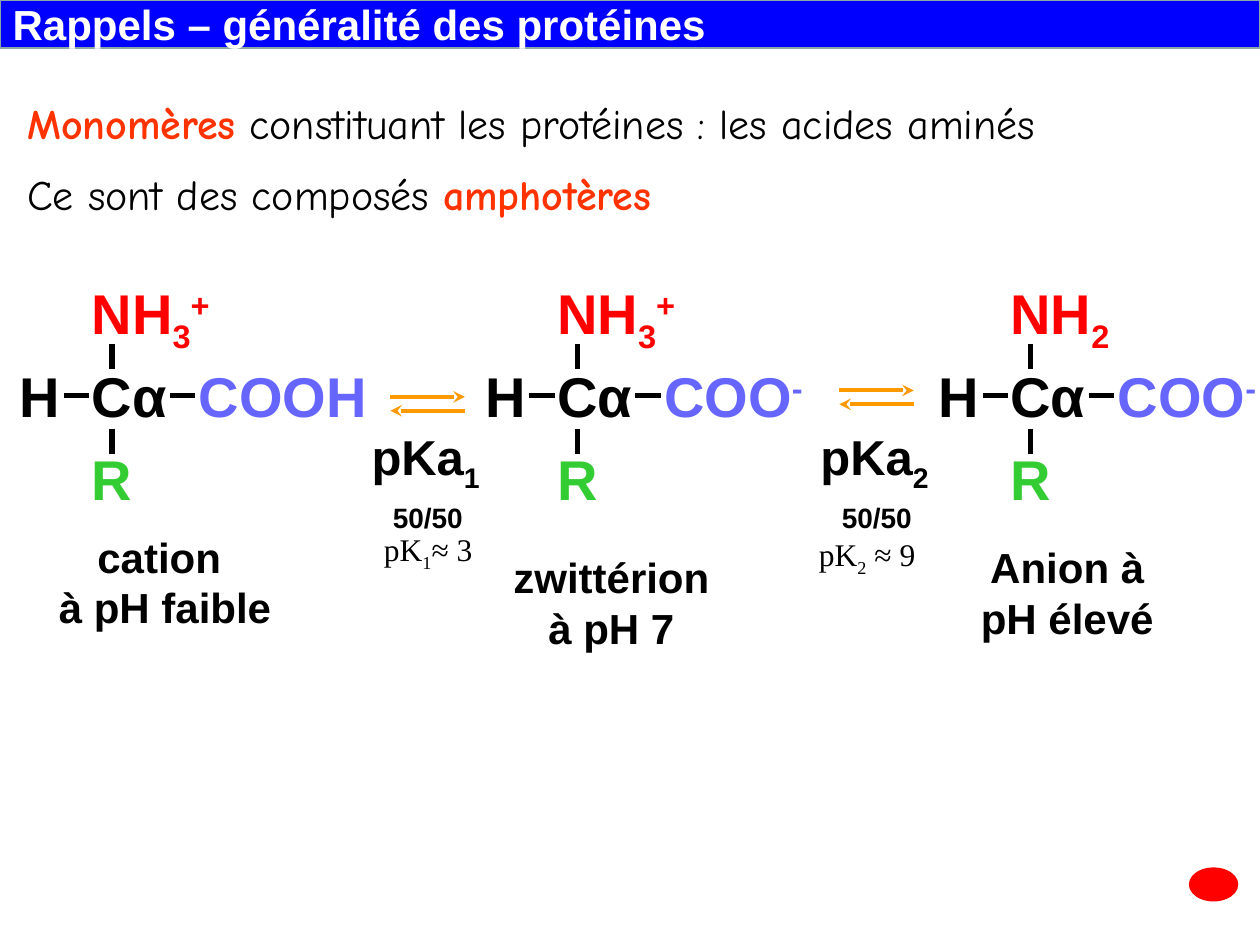
from lxml.etree import SubElement
from pptx import Presentation
from pptx.dml.color import RGBColor
from pptx.enum.shapes import MSO_CONNECTOR as Link, MSO_SHAPE as Preset
from pptx.enum.text import MSO_ANCHOR as Anchor, MSO_AUTO_SIZE as AutoSize, PP_ALIGN as Align
from pptx.oxml.ns import qn
from pptx.util import Cm, Pt

rgb = RGBColor.from_string
BLACK, RED, GREEN, VIOLET = "000000", "FF0000", "33CC33", "6666FF"
ORANGE, VERMILION = "FF9900", "FF3300"
SUB, SUP = -25, 30

prs = Presentation()
prs.slide_width, prs.slide_height = Cm(25.4), Cm(19.05)
slide = prs.slides.add_slide(prs.slide_layouts[5])


def write(left, top, width, size, *lines, color=BLACK, font="Arial", bold=True, wrap=False, align=Align.LEFT):
    box = slide.shapes.add_textbox(Cm(left), Cm(top), Cm(width), Cm(size * 0.05 * len(lines)))
    frame = box.text_frame
    frame.word_wrap = wrap
    frame.auto_size = AutoSize.SHAPE_TO_FIT_TEXT
    for number, pieces in enumerate(lines):
        paragraph = frame.add_paragraph() if number else frame.paragraphs[0]
        paragraph.alignment = align
        for words, changes in pieces:
            run = paragraph.add_run()
            run.text = words
            run.font.name = font
            run.font.size = Pt(size)
            run.font.bold = changes.get("bold", bold)
            run.font.color.rgb = rgb(changes.get("color", color))
            if "base" in changes:
                run.font._element.set("baseline", str(changes["base"] * 1000))


def draw_line(x1, y1, x2, y2, color=BLACK, weight=3, arrow=False):
    line = slide.shapes.add_connector(Link.STRAIGHT, Cm(x1), Cm(y1), Cm(x2), Cm(y2))
    line.line.color.rgb = rgb(color)
    line.line.width = Pt(weight)
    if arrow:
        SubElement(line.line._get_or_add_ln(), qn("a:tailEnd"), type="stealth")
    SubElement(line._element.spPr, qn("a:effectLst"))


title = slide.shapes.title
title.left, title.top, title.width, title.height = Cm(0), Cm(0), Cm(25.4), Cm(0.97)
title.fill.solid()
title.fill.fore_color.rgb = rgb("0000FF")
title.line.color.rgb = rgb("8AA6A8")
title.line.width = Pt(1)
title.text_frame.text = "Rappels – généralité des protéines"
title.text_frame.auto_size = AutoSize.NONE
title.text_frame.vertical_anchor = Anchor.MIDDLE
heading = title.text_frame.paragraphs[0]
heading.alignment = Align.LEFT
heading.runs[0].font.name = "Arial"
heading.runs[0].font.size = Pt(24)
heading.runs[0].font.bold = True
heading.runs[0].font.color.rgb = rgb("FFFFFF")

accent = {"color": VERMILION, "bold": True}
write(0.3, 1.85, 24.64, 24,
      [("Monomères", accent), (" constituant les protéines : les acides aminés", {})],
      font="Comic Neue", bold=False, wrap=True)
write(0.3, 3.28, 14.1, 24, [("Ce sont des composés ", {}), ("amphotères", accent)],
      font="Comic Neue", bold=False)

ammonium = [("NH", {}), ("3", {"base": SUB}), ("+", {"base": SUP})]
amine = [("NH", {}), ("2", {"base": SUB})]
acid = [("COOH", {})]
carboxylate = [("COO", {}), ("-", {"base": SUP})]
molecules = [
    (0.15, ammonium, 3.0, acid, 3.89),
    (9.53, ammonium, 3.0, carboxylate, 3.33),
    (18.67, amine, 2.57, carboxylate, 3.33),
]
for left, amino, amino_width, carboxyl, carboxyl_width in molecules:
    write(left + 1.45, 5.49, amino_width, 32, amino, color=RED)
    write(left, 7.16, 1.32, 32, [("H", {})])
    write(left + 1.45, 7.16, 2.03, 32, [("Cα", {})])
    write(left + 3.61, 7.16, carboxyl_width, 32, carboxyl, color=VIOLET)
    write(left + 1.45, 8.84, 1.32, 32, [("R", {})], color=GREEN)
    for bond_top in (6.93, 8.64):
        draw_line(left + 2.11, bond_top, left + 2.11, bond_top + 0.51)
    for bond_left in (left + 1.14, left + 3.28):
        draw_line(bond_left, 7.98, bond_left + 0.51, 7.98)

equilibria = [
    (7.87, 8.0, "1", "≈ 3", 7.49, 10.57, 3.1),
    (16.92, 7.87, "2", " ≈ 9", 16.26, 10.67, 2.69),
]
for left, top, index, value, pk_left, pk_top, pk_width in equilibria:
    draw_line(left, top, left + 1.5, top, ORANGE, 2.25, arrow=True)
    draw_line(left + 1.5, top + 0.28, left, top + 0.28, ORANGE, 2.25, arrow=True)
    write(left - 0.63, 8.48, 2.77, 28, [("pKa", {}), (index, {"base": SUB})])
    write(left - 0.2, 9.96, 1.93, 16, [("50/50", {})])
    write(pk_left, pk_top, pk_width, 18, [("pK", {}), (index, {"base": SUB}), (value, {})],
          font="Times New Roman", bold=False, wrap=True)

captions = [
    (0.1, 10.59, 6.22, ["cation", " à pH faible"]),
    (9.86, 11.0, 4.93, ["zwittérion à pH 7"]),
    (19.51, 10.8, 4.01, ["Anion à pH élevé"]),
]
for left, top, width, lines in captions:
    write(left, top, width, 24, *[[(words, {})] for words in lines], wrap=True, align=Align.CENTER)

marker = slide.shapes.add_shape(Preset.OVAL, Cm(23.98), Cm(17.5), Cm(0.97), Cm(0.66))
marker.shadow.inherit = False
marker.fill.solid()
marker.fill.fore_color.rgb = rgb(RED)
marker.line.color.rgb = rgb(RED)
marker.line.width = Pt(0.75)

prs.save("out.pptx")
